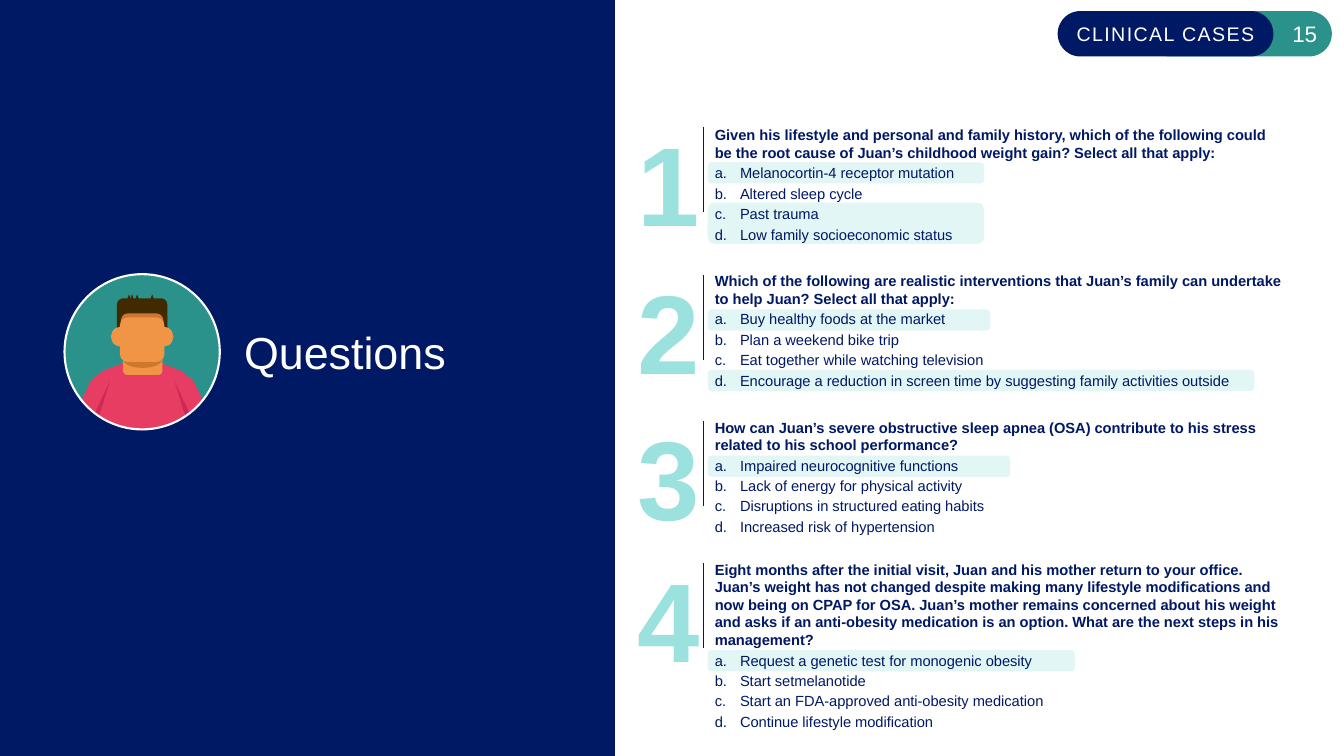
from lxml import etree
from pptx import Presentation
from pptx import util as u
from pptx.dml.color import RGBColor
from pptx.enum import shapes, text
from pptx.oxml.ns import qn

PX = 9144  # EMU; 100 px to the inch
NAVY = RGBColor(0x00, 0x19, 0x65)
TEAL = RGBColor(0x2A, 0x91, 0x8B)
AQUA = RGBColor(0x9B, 0xE2, 0xDE)
MINT = RGBColor(0xCD, 0xF0, 0xEE)
WHITE = RGBColor(0xFF, 0xFF, 0xFF)
SHIRT = RGBColor(0xE7, 0x3D, 0x62)
SHIRT_FOLD = RGBColor(0xCE, 0x29, 0x54)
SKIN = RGBColor(0xF0, 0x94, 0x46)
SKIN_SHADE = RGBColor(0xCF, 0x77, 0x2E)
HAIR = RGBColor(0x42, 0x2A, 0x00)
KIND = shapes.MSO_SHAPE
ROUND = KIND.ROUNDED_RECTANGLE
LEFT, CENTER, RIGHT = text.PP_ALIGN.LEFT, text.PP_ALIGN.CENTER, text.PP_ALIGN.RIGHT
TOP, MIDDLE = text.MSO_ANCHOR.TOP, text.MSO_ANCHOR.MIDDLE

deck = Presentation()
deck.slide_width, deck.slide_height = 1333 * PX, 750 * PX
slide = deck.slides.add_slide(deck.slide_layouts[6])
canvas = slide.shapes


def write(frame, words, size, color, align=LEFT, anchor=TOP, margins=(0, 0), wrap=True, bold=False):
    """Fill the first paragraph of a frame and return that paragraph."""
    side, edge = (margin * PX for margin in margins)
    layout = {"margin_left": side, "margin_right": side, "margin_top": edge,
              "margin_bottom": edge, "vertical_anchor": anchor, "word_wrap": wrap}
    for name, value in layout.items():
        setattr(frame, name, value)
    line = frame.paragraphs[0]
    line.text, line.alignment = words, align
    font = line.runs[0].font
    for name, value in {"name": "Arial", "size": u.Pt(size), "bold": bold}.items():
        setattr(font, name, value)
    font.color.rgb = color
    return line


def add_block(kind, box, fill):
    """Add a preset shape with a plain fill and no line."""
    block = canvas.add_shape(kind, *(n * PX for n in box))
    block.shadow.inherit = False
    block.fill.solid()
    block.fill.fore_color.rgb = fill
    block.line.fill.background()
    return block


add_block(KIND.RECTANGLE, (0, 0, 610, 750), NAVY)

# Header tabs
for left, width, fill, words, size, align in [(1138, 183, TEAL, "15", 16, RIGHT),
                                              (1049, 214, NAVY, "CLINICAL CASES", 14, CENTER)]:
    tab = add_block(ROUND, (left, 11, width, 45), fill)
    tab.adjustments[0] = 0.5
    line = write(tab.text_frame, words, size, WHITE, align, MIDDLE, (8, 4))
    if align == CENTER:
        line.runs[0]._r.get_or_add_rPr().set("spc", "100")

# Portrait, symmetrical about its middle
middle = 141
portrait = (64, 272, 154, 154)
add_block(KIND.OVAL, portrait, TEAL)
half_shirt = [(0, 356), (13, 358), (39, 368), (51, 378), (60, 397), (54, 404), (30, 420), (0, 427)]
fold = [(32, 378), (47, 410), (43, 414)]
clothes = [(SHIRT, half_shirt + [(-x, y) for x, y in reversed(half_shirt)])]
clothes += [(SHIRT_FOLD, [(side * x, y) for x, y in fold]) for side in (-1, 1)]
for color, points in clothes:
    spots = [((middle + x) * PX, y * PX) for x, y in points]
    builder = canvas.build_freeform(*spots[0], scale=1.0)
    builder.add_line_segments(spots[1:], close=True)
    garment = builder.convert_to_shape()
    garment.shadow.inherit = False
    garment.fill.solid()
    garment.fill.fore_color.rgb = color
    garment.line.fill.background()

head = [(ROUND, 347, 39, 25, SKIN), (KIND.OVAL, 348, 39, 17, SKIN_SHADE),
        (ROUND, 296, 50, 36, HAIR), (ROUND, 311, 42, 40, SKIN_SHADE), (ROUND, 315, 44, 44, SKIN)]
for kind, top, width, height, color in head:
    add_block(kind, (middle - width // 2, top, width, height), color)
for side in (-1, 1):
    add_block(KIND.OVAL, (middle + side * 21 - 10, 324, 20, 20), SKIN)
for left in (125, 128, 133, 148):
    add_block(KIND.ISOSCELES_TRIANGLE, (left, 292, 6, 8), HAIR)

ring = add_block(KIND.OVAL, portrait, TEAL)
ring.fill.background()
ring.line.color.rgb, ring.line.width = WHITE, u.Pt(1.5)

title = canvas.add_textbox(242 * PX, 45 * PX, 295 * PX, 608 * PX)
write(title.text_frame, "Questions", 32, WHITE, anchor=MIDDLE)

# Tops of rule, text and options; highlights as (first option, options, width)
questions = [
    (126, 125, 161, [(0, 1, 274), (2, 2, 274)],
     "Given his lifestyle and personal and family history, which of the following could be "
     "the root cause of Juan’s childhood weight gain? Select all that apply:",
     ["Melanocortin-4 receptor mutation", "Altered sleep cycle", "Past trauma",
      "Low family socioeconomic status"]),
    (273, 270, 307, [(0, 1, 280), (3, 1, 542)],
     "Which of the following are realistic interventions that Juan’s family can undertake "
     "to help Juan? Select all that apply:",
     ["Buy healthy foods at the market", "Plan a weekend bike trip",
      "Eat together while watching television",
      "Encourage a reduction in screen time by suggesting family activities outside"]),
    (418, 415, 452, [(0, 1, 300)],
     "How can Juan’s severe obstructive sleep apnea (OSA) contribute to his stress related "
     "to his school performance?",
     ["Impaired neurocognitive functions", "Lack of energy for physical activity",
      "Disruptions in structured eating habits", "Increased risk of hypertension"]),
    (559, 556, 645, [(0, 1, 364)],
     "Eight months after the initial visit, Juan and his mother return to your office. "
     "Juan’s weight has not changed despite making many lifestyle modifications and now being on "
     "CPAP for OSA. Juan’s mother remains concerned about his weight and asks if an anti-obesity "
     "medication is an option. What are the next steps in his management?",
     ["Request a genetic test for monogenic obesity", "Start setmelanotide",
      "Start an FDA-approved anti-obesity medication", "Continue lifestyle modification"]),
]
for number, (rule_top, text_top, option_top, highlights, question, options) in enumerate(questions, 1):
    for first, count, width in highlights:
        highlight = add_block(ROUND, (702, option_top + first * 20, width, count * 20 + 1), MINT)
        tint = highlight._element.spPr.find(".//" + qn("a:srgbClr"))
        etree.SubElement(tint, qn("a:alpha"), val="58000")

    numeral = canvas.add_textbox(632 * PX, (rule_top - 39) * PX, 62 * PX, 147 * PX)
    write(numeral.text_frame, str(number), 80, AQUA, wrap=False, bold=True).line_spacing = 1.2

    rule = canvas.add_connector(shapes.MSO_CONNECTOR.STRAIGHT, 698 * PX, rule_top * PX,
                                698 * PX, (rule_top + 84) * PX)
    rule.line.color.rgb, rule.line.width = NAVY, u.Pt(1)
    etree.SubElement(rule._element.spPr, qn("a:effectLst"))

    frame = canvas.add_textbox(709 * PX, text_top * PX, 564 * PX, 138 * PX).text_frame
    write(frame, question, 10.5, NAVY, bold=True).space_after = u.Pt(2)
    for option in options:
        answer = frame.add_paragraph()
        answer.text = option
        answer.space_after = u.Pt(2)
        indent = answer._p.get_or_add_pPr()
        indent.set("marL", str(25 * PX))
        indent.set("indent", str(-25 * PX))
        etree.SubElement(indent, qn("a:buFont"), typeface="+mj-lt")
        etree.SubElement(indent, qn("a:buAutoNum"), type="alphaLcPeriod")
        font = answer.runs[0].font
        font.name, font.size, font.color.rgb = "Arial", u.Pt(10.5), NAVY

deck.save("out.pptx")
